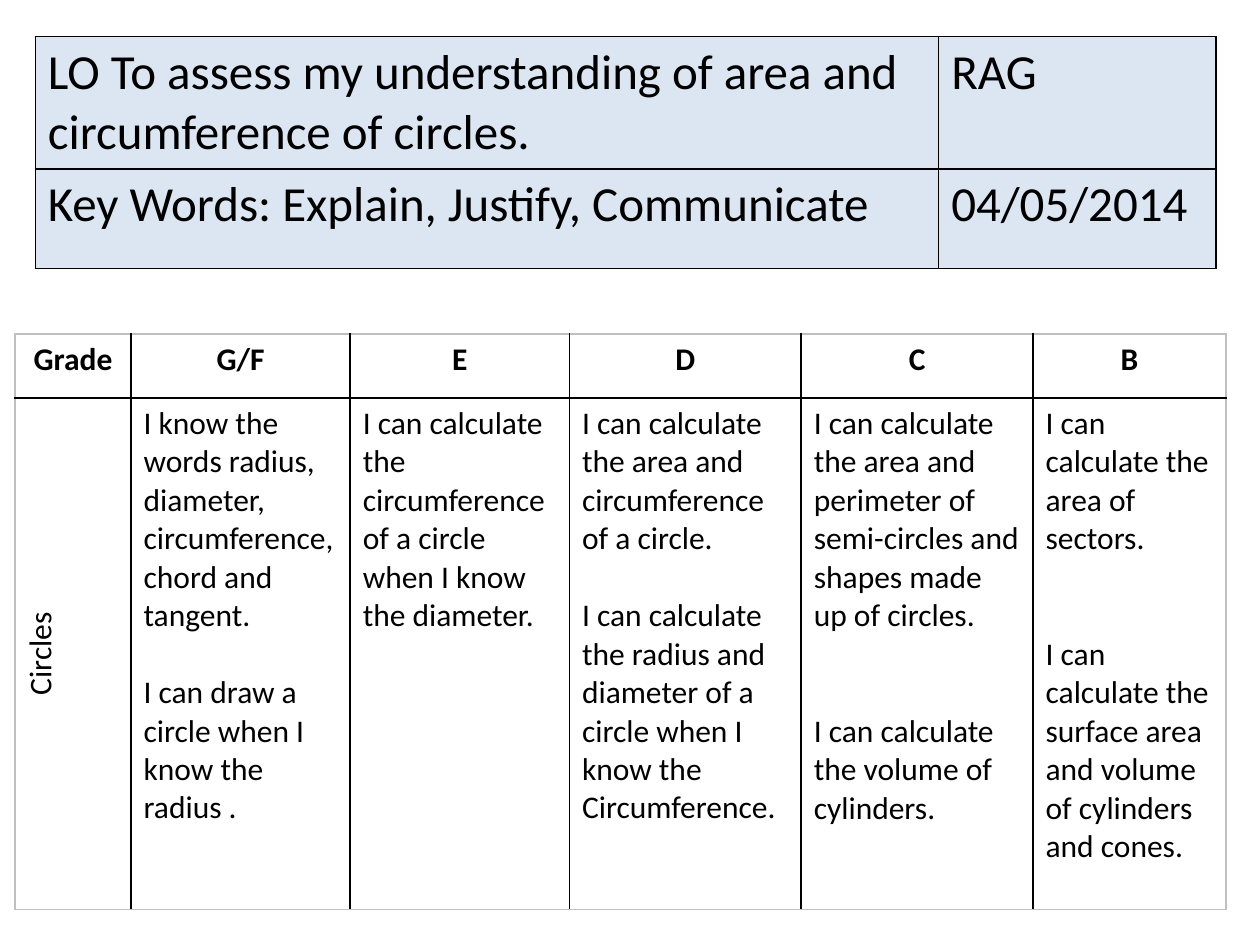
import pptx
import pptx.util
import pptx.dml.color
import pptx.enum.text
import pptx.oxml.ns
import lxml.etree

Inches, Pt = pptx.util.Inches, pptx.util.Pt
COLORS = {"text": "000000", "line": "000000", "frame": "BFBFBF", "banner": "DCE6F2"}
LINE_HEIGHT = 22


class Deck:
    """Holds the style and the current slide, and adds elements to it."""

    def __init__(self, prs, font):
        self.font = font
        self.s = prs.slides.add_slide(prs.slide_layouts[6])

    def border(self, cell, side, color):
        tcPr = cell._tc.get_or_add_tcPr()
        qn = pptx.oxml.ns.qn
        ln = lxml.etree.SubElement(tcPr, qn(f"a:ln{side}"), w=str(Pt(1)))
        fill = lxml.etree.SubElement(ln, qn("a:solidFill"))
        lxml.etree.SubElement(fill, qn("a:srgbClr"), val=COLORS[color])

    def cell_text(self, cell, paragraphs, size, bold, centred, gap):
        tf = cell.text_frame
        tf.text = "\n".join(paragraphs)
        for i, p in enumerate(tf.paragraphs):
            if centred:
                p.alignment = pptx.enum.text.PP_ALIGN.CENTER
            if i:
                p.space_before = Pt(gap * LINE_HEIGHT)
            for r in p.runs:
                r.font.name, r.font.size, r.font.bold = self.font, Pt(size), bold
                r.font.color.rgb = pptx.dml.color.RGBColor.from_string(COLORS["text"])

    def table(self, left, top, widths, heights, rows, size, frame="line",
              fill=None, headings=False, gaps=None):
        shape = self.s.shapes.add_table(
            len(rows), len(widths), Inches(left), Inches(top),
            Inches(sum(widths)), Inches(sum(heights)))
        table = shape.table
        table.first_row = table.horz_banding = False
        for column, width in zip(table.columns, widths):
            column.width = Inches(width)
        for row, height in zip(table.rows, heights):
            row.height = Inches(height)
        last_row, last_col = len(rows) - 1, len(widths) - 1
        for i, row in enumerate(rows):
            for j, paragraphs in enumerate(row):
                cell = table.cell(i, j)
                outer = {"L": j == 0, "R": j == last_col, "T": i == 0, "B": i == last_row}
                for side, at_edge in outer.items():
                    self.border(cell, side, frame if at_edge else "line")
                if fill:
                    cell.fill.solid()
                    cell.fill.fore_color.rgb = pptx.dml.color.RGBColor.from_string(COLORS[fill])
                else:
                    cell.fill.background()
                heading = headings and i == 0
                self.cell_text(cell, paragraphs, size, heading,
                               headings and (i == 0 or j == 0), gaps[j] if gaps else 0)
        return table


def main():
    prs = pptx.Presentation()
    prs.slide_width, prs.slide_height = Inches(10), Inches(7.5)
    deck = Deck(prs, "Calibri")

    deck.table(0.28, 0.29, [7.17, 2.2], [1.04, 0.79], [
        [["LO To assess my understanding of area and circumference of circles."], ["RAG"]],
        [["Key Words: Explain, Justify, Communicate"], ["04/05/2014"]],
    ], size=28, fill="banner")

    grades = [[name] for name in ("Grade", "G/F", "E", "D", "C", "B")]
    circles = [
        ["Circles"],
        ["I know the words radius, diameter, circumference, chord and tangent.",
         "I can draw a circle when I know the radius ."],
        ["I can calculate the circumference of a circle when I know the diameter."],
        ["I can calculate the area and circumference of a circle.",
         "I can calculate the radius and diameter of a circle when I know the Circumference."],
        ["I can calculate the area and perimeter of semi-circles and shapes made up of circles.",
         "I can calculate the volume of cylinders."],
        ["I can calculate the area of sectors.",
         "I can calculate the surface area and volume of cylinders and cones."],
    ]
    table = deck.table(0.12, 2.65, [0.92, 1.74, 1.74, 1.84, 1.84, 1.53], [0.51, 4.06],
                       [grades, circles], size=18, frame="frame", headings=True,
                       gaps=[0, 1, 0, 1, 2, 2])
    table.cell(1, 0)._tc.get_or_add_tcPr().set("vert", "vert270")

    prs.save("out.pptx")


if __name__ == "__main__":
    main()
